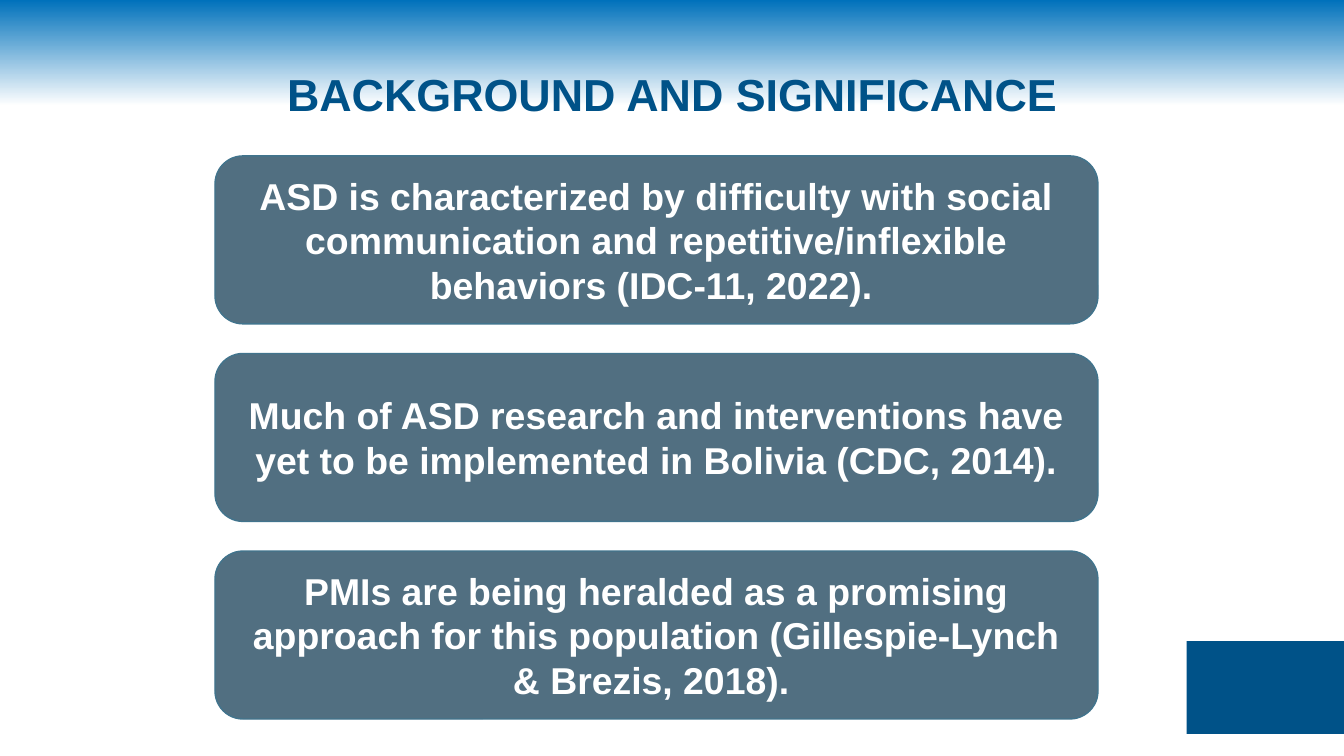
from dataclasses import dataclass

from pptx import Presentation
from pptx.dml.color import RGBColor
from pptx.enum.shapes import MSO_SHAPE
from pptx.enum.text import MSO_ANCHOR, PP_ALIGN
from pptx.util import Inches, Pt


@dataclass(frozen=True)
class Theme:
    font: str = "Arial"
    sky: RGBColor = RGBColor(0x00, 0x71, 0xBB)
    navy: RGBColor = RGBColor(0x00, 0x52, 0x88)
    slate: RGBColor = RGBColor(0x51, 0x6F, 0x81)
    outline: RGBColor = RGBColor(0x41, 0x74, 0x8D)
    white: RGBColor = RGBColor(0xFF, 0xFF, 0xFF)
    title_size: Pt = Pt(24)
    card_size: Pt = Pt(20)


theme = Theme()


def write_text(shape, text, *, size, color, inset_x, inset_y):
    frame = shape.text_frame
    frame.word_wrap = True
    frame.vertical_anchor = MSO_ANCHOR.MIDDLE
    frame.margin_left = frame.margin_right = Inches(inset_x)
    frame.margin_top = frame.margin_bottom = Inches(inset_y)
    paragraph = frame.paragraphs[0]
    paragraph.alignment = PP_ALIGN.CENTER
    run = paragraph.add_run()
    run.text = text
    run.font.name = theme.font
    run.font.size = size
    run.font.bold = True
    run.font.color.rgb = color


# Widescreen slide, 16:9
presentation = Presentation()
presentation.slide_width = Inches(10)
presentation.slide_height = Inches(10) * 9 // 16
slide = presentation.slides.add_slide(presentation.slide_layouts[6])

# Background: blue fading to white at the top
background = slide.background.fill
background.gradient()
background.gradient_angle = 270
stops = ((0, theme.sky), (0.14, theme.white))
for stop, (position, color) in zip(background.gradient_stops, stops):
    stop.position = position
    stop.color.rgb = color

# Corner block
corner = slide.shapes.add_shape(
    MSO_SHAPE.RECTANGLE, Inches(8.83), Inches(4.77), Inches(1.17), Inches(0.69)
)
corner.shadow.inherit = False
corner.fill.solid()
corner.fill.fore_color.rgb = theme.navy
corner.line.fill.background()

# Title
title = slide.shapes.add_textbox(Inches(0.5), Inches(0.23), Inches(9), Inches(0.94))
write_text(title, "BACKGROUND AND SIGNIFICANCE",
           size=theme.title_size, color=theme.navy, inset_x=0.07, inset_y=0.04)

# Statement cards
statements = (
    "ASD is characterized by difficulty with social communication and "
    "repetitive/inflexible behaviors (IDC-11, 2022). ",
    "Much of ASD research and interventions have yet to be implemented "
    "in Bolivia (CDC, 2014).",
    "PMIs are being heralded as a promising approach for this population "
    "(Gillespie-Lynch & Brezis, 2018). ",
)
card_top, card_height, card_gap = 1.16, 1.25, 0.22
for index, statement in enumerate(statements):
    top = card_top + index * (card_height + card_gap)
    card = slide.shapes.add_shape(
        MSO_SHAPE.ROUNDED_RECTANGLE,
        Inches(1.6), Inches(top), Inches(6.57), Inches(card_height),
    )
    card.shadow.inherit = False
    card.fill.solid()
    card.fill.fore_color.rgb = theme.slate
    card.line.color.rgb = theme.outline
    card.line.width = Pt(0.75)
    write_text(card, statement, size=theme.card_size, color=theme.white,
               inset_x=0.1, inset_y=0.1)

presentation.save("out.pptx")
